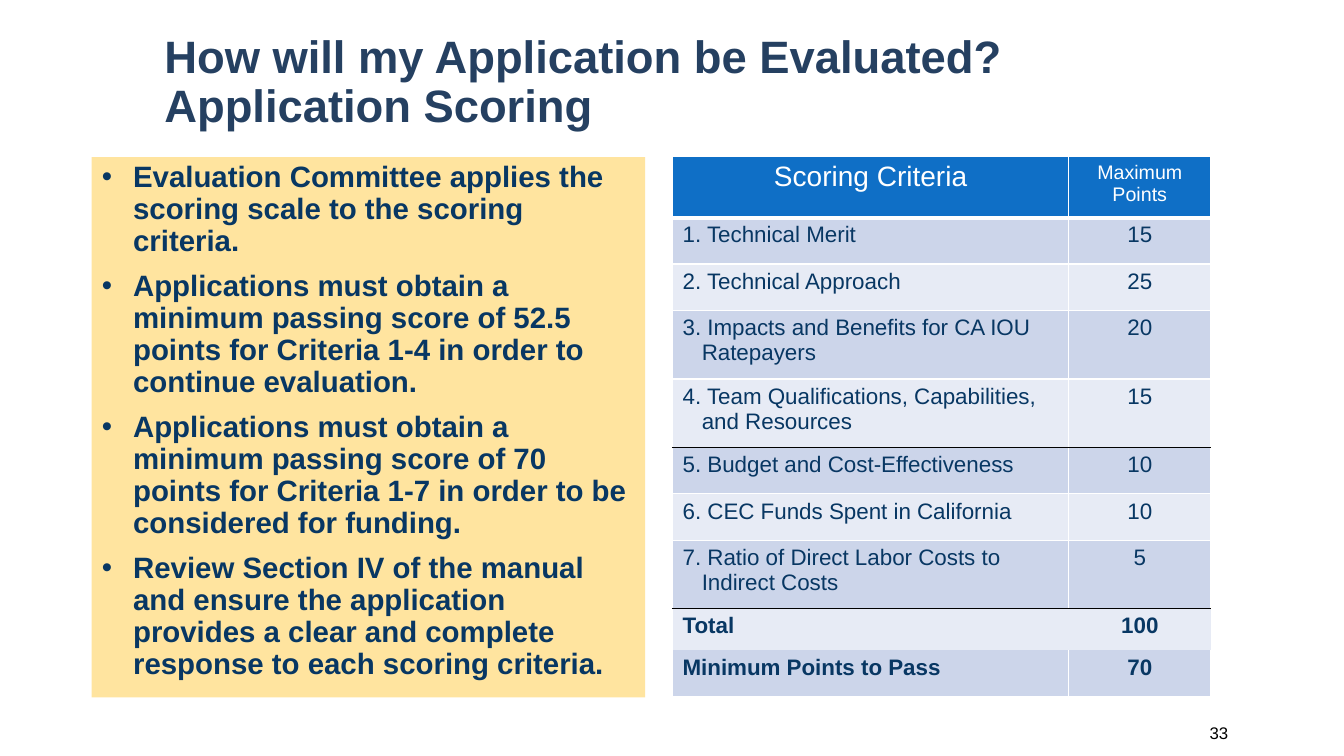
from lxml.etree import SubElement
from pptx import Presentation
from pptx.dml.color import RGBColor
from pptx.enum.text import MSO_ANCHOR, MSO_AUTO_SIZE, PP_ALIGN
from pptx.oxml.ns import qn
from pptx.util import Inches, Pt

NAVY = "083763"
WHITE = "FFFFFF"
BLACK = "000000"
HEADER_BLUE = "0F6FC6"
BANDS = ["E7EBF5", "CCD5EA"]

POINTS = [
    "Evaluation Committee applies the scoring scale to the scoring criteria.",
    "Applications must obtain a minimum passing score of 52.5 points for Criteria 1-4 "
    "in order to continue evaluation.",
    "Applications must obtain a minimum passing score of 70 points for Criteria 1-7 "
    "in order to be considered for funding.",
    "Review Section IV of the manual and ensure the application provides a clear and "
    "complete response to each scoring criteria.",
]
SCORES = [
    ("Scoring Criteria", "Maximum Points", 0.61),
    ("1. Technical Merit", "15", 0.46),
    ("2. Technical Approach", "25", 0.46),
    ("3. Impacts and Benefits for CA IOU Ratepayers", "20", 0.68),
    ("4. Team Qualifications, Capabilities, and Resources", "15", 0.68),
    ("5. Budget and Cost-Effectiveness", "10", 0.46),
    ("6. CEC Funds Spent in California", "10", 0.46),
    ("7. Ratio of Direct Labor Costs to Indirect Costs", "5", 0.68),
    ("Total", "100", 0.41),
    ("Minimum Points to Pass", "70", 0.46),
]
COLUMN_WIDTHS = [3.93, 1.41]
TOTAL_ROW = 8
RULED_ROWS = [4, 7]


def color(value):
    return RGBColor.from_string(value)


def format_paragraph(paragraph, size, hue, bold=False, **settings):
    for name, value in settings.items():
        setattr(paragraph, name, value)
    font_values = {"name": "Arial", "size": Pt(size), "bold": bold}
    for item in [paragraph.font, *(run.font for run in paragraph.runs)]:
        for name, value in font_values.items():
            setattr(item, name, value)
        item.color.rgb = color(hue)


def hang(paragraph, indent):
    properties = paragraph._p.get_or_add_pPr()
    properties.set("marL", str(Inches(indent)))
    properties.set("indent", str(Inches(-indent)))


def place(shape, left, top, width, height):
    box = {"left": left, "top": top, "width": width, "height": height}
    for name, value in box.items():
        setattr(shape, name, Inches(value))


def add_title(slide):
    title = slide.shapes.title
    place(title, 1.53, 0.26, 10.89, 1.14)
    frame = title.text_frame
    frame.auto_size = MSO_AUTO_SIZE.NONE
    frame.vertical_anchor = MSO_ANCHOR.MIDDLE
    paragraph = frame.paragraphs[0]
    paragraph.add_run().text = "How will my Application be Evaluated? "
    paragraph.add_line_break()
    paragraph.add_run().text = "Application Scoring"
    format_paragraph(paragraph, 32.4, "254061", True,
                     alignment=PP_ALIGN.LEFT, line_spacing=0.9)


def add_points(slide):
    body = slide.placeholders[1]
    place(body, 0.91, 1.56, 5.49, 5.36)
    body.fill.solid()
    body.fill.fore_color.rgb = color("FFE49F")
    frame = body.text_frame
    frame.auto_size = MSO_AUTO_SIZE.NONE
    for index, text in enumerate(POINTS):
        paragraph = frame.add_paragraph() if index else frame.paragraphs[0]
        paragraph.text = text
        hang(paragraph, 0.31)
        format_paragraph(paragraph, 21, NAVY, True, line_spacing=0.9,
                         space_before=Pt(10 if index else 0))


def set_borders(cell, borders):
    properties = cell._tc.get_or_add_tcPr()
    for side in "LRTB":
        hue, width = borders.get(side, (None, 1))
        line = SubElement(properties, qn(f"a:ln{side}"), w=str(Pt(width)))
        if hue:
            fill = SubElement(line, qn("a:solidFill"))
            SubElement(fill, qn("a:srgbClr"), val=hue)
        else:
            SubElement(line, qn("a:noFill"))


def row_borders(row):
    borders = {side: (WHITE, 1) for side in "LRTB"}
    if row == 0:
        borders["B"] = (WHITE, 3)
    if row in RULED_ROWS:
        borders["B"] = (BLACK, 1)
    if row - 1 in RULED_ROWS:
        borders["T"] = (BLACK, 1)
    if row == TOTAL_ROW:
        return {"T": borders["T"]}
    if row > TOTAL_ROW:
        del borders["T"]
    return borders


def fill_cell(cell, text, row, column):
    set_borders(cell, row_borders(row))
    cell.fill.solid()
    cell.fill.fore_color.rgb = color(BANDS[row % 2] if row else HEADER_BLUE)
    paragraph = cell.text_frame.paragraphs[0]
    paragraph.text = text
    centred = column == 1 or row == 0
    if not centred and row < TOTAL_ROW:
        hang(paragraph, 0.19)
    size = 16 if row else (20, 14)[column]
    format_paragraph(paragraph, size, NAVY if row else WHITE, row >= TOTAL_ROW,
                     alignment=PP_ALIGN.CENTER if centred else PP_ALIGN.LEFT)


def add_scores(slide):
    table = slide.shapes.add_table(
        len(SCORES), len(COLUMN_WIDTHS),
        Inches(6.67), Inches(1.55), Inches(5.34), Inches(5.36)).table
    table.first_row = table.horz_banding = False
    for column, width in zip(table.columns, COLUMN_WIDTHS):
        column.width = Inches(width)
    for row, (criterion, points, height) in enumerate(SCORES):
        table.rows[row].height = Inches(height)
        for column, text in enumerate((criterion, points)):
            fill_cell(table.cell(row, column), text, row, column)


def add_page_number(slide):
    box = slide.shapes.add_textbox(Inches(10.35), Inches(7.07), Inches(1.93), Inches(0.4))
    frame = box.text_frame
    frame.word_wrap = True
    frame.vertical_anchor = MSO_ANCHOR.MIDDLE
    paragraph = frame.paragraphs[0]
    paragraph.text = "33"
    format_paragraph(paragraph, 12, BLACK, alignment=PP_ALIGN.RIGHT)


def main():
    presentation = Presentation()
    presentation.slide_width = Inches(13.33)
    presentation.slide_height = Inches(7.5)
    slide = presentation.slides.add_slide(presentation.slide_layouts[1])
    add_title(slide)
    add_points(slide)
    add_scores(slide)
    add_page_number(slide)
    presentation.save("out.pptx")


if __name__ == "__main__":
    main()
